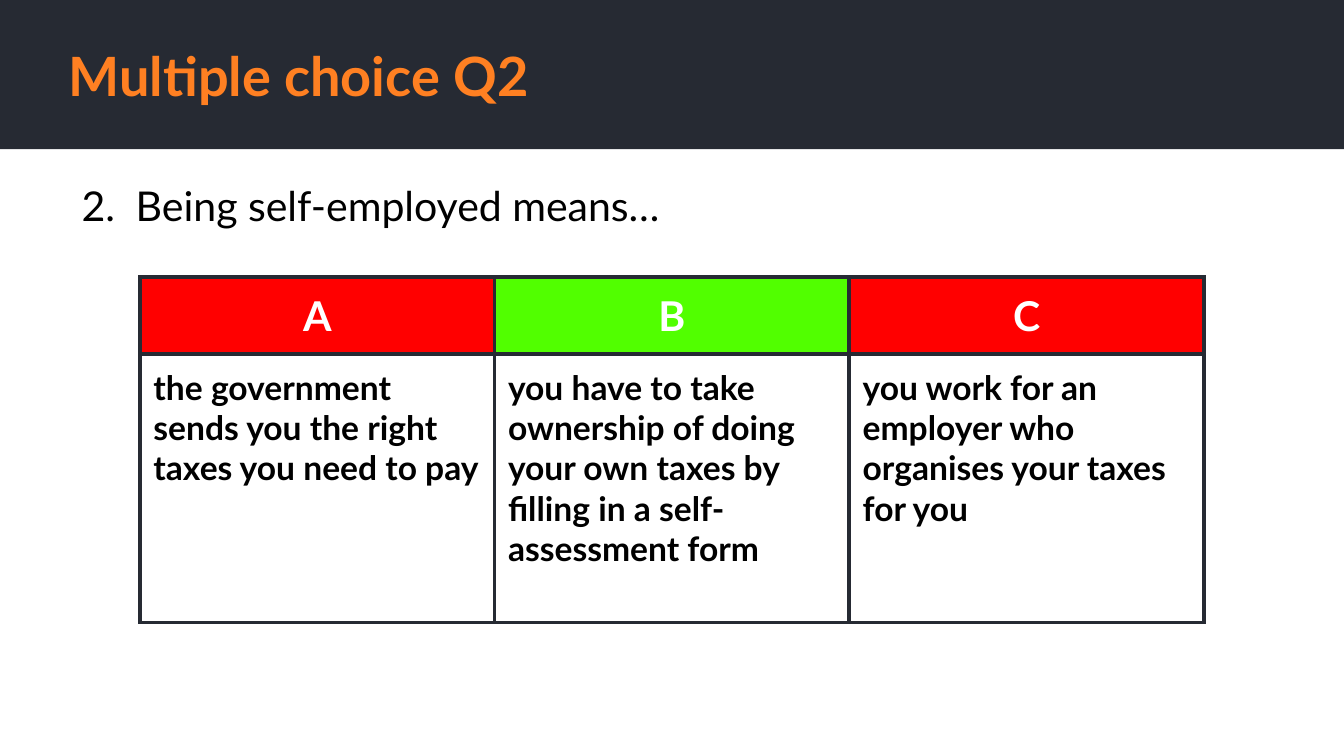
from pptx import Presentation
from pptx import util as u
from pptx.dml.color import RGBColor
from pptx.enum import shapes, text
from pptx.oxml import parse_xml
from pptx.oxml.ns import nsdecls

Pt = u.Pt
DARK, RED, GREEN = "262A33", "FF0000", "51FF00"


def ink(fmt, hue):
    fmt.solid()
    fmt.fore_color.rgb = RGBColor.from_string(hue)


def write(frame, words, size=18, hue="000000", bold=False,
          align=text.PP_ALIGN.LEFT, marks=()):
    frame.word_wrap = True
    para = frame.paragraphs[0]
    para.text = words
    para.alignment = align
    para.space_before = Pt(0)
    for mark in marks:
        para._p.get_or_add_pPr().append(parse_xml(mark))
    para.font.name, para.font.size, para.font.bold = "Lato", Pt(size), bold
    ink(para.font.fill, hue)
    return para


deck = Presentation()
deck.slide_width, deck.slide_height = Pt(720), Pt(405)
slide = deck.slides.add_slide(deck.slide_layouts[1])
title, body = slide.placeholders

# Header band, behind the title
band = slide.shapes.add_shape(shapes.MSO_SHAPE.RECTANGLE, 0, 0, Pt(720), Pt(80))
band.shadow.inherit = False
ink(band.fill, DARK)
band.line.fill.background()
slide.shapes._spTree.insert(2, band._element)

# Title and question
for box, top, width, high, anchor in (
        (title, 20, 629, 40, text.MSO_ANCHOR.MIDDLE),
        (body, 89.3, 603, 41, text.MSO_ANCHOR.TOP)):
    box.left, box.top, box.width, box.height = Pt(29.5), Pt(top), Pt(width), Pt(high)
    frame = box.text_frame
    frame.auto_size = text.MSO_AUTO_SIZE.NONE
    frame.vertical_anchor = anchor
    frame.margin_left = frame.margin_right = Pt(7.2)
    frame.margin_top = frame.margin_bottom = Pt(7.2)
write(title.text_frame, "Multiple choice Q2", size=29, hue="FF8022", bold=True)
number = f'<a:buAutoNum {nsdecls("a")} type="arabicPeriod" startAt="2"/>'
para = write(body.text_frame, "Being self-employed means…", size=22, marks=[number])
props = para._p.get_or_add_pPr()
props.set("marL", str(Pt(36)))
props.set("indent", str(-Pt(29)))

# Answer table
answers = (
    ("A", RED, "the government sends you the right taxes you need to pay"),
    ("B", GREEN, "you have to take ownership of doing your own taxes by "
                 "filling in a self-assessment form"),
    ("C", RED, "you work for an employer who organises your taxes for you"),
)
grid = slide.shapes.add_table(2, 3, Pt(75), Pt(148.5), Pt(570), Pt(185)).table
grid.rows[0].height, grid.rows[1].height = Pt(41), Pt(144)
for col, (head, hue, words) in enumerate(answers):
    grid.columns[col].width = Pt(190)
    top, low = grid.cell(0, col), grid.cell(1, col)
    write(top.text_frame, head, size=22, hue="FFFFFF", bold=True,
          align=text.PP_ALIGN.CENTER)
    write(low.text_frame, words, bold=True)
    for cell, fill in ((top, hue), (low, "FFFFFF")):
        cell.margin_left = cell.margin_right = Pt(7.2)
        cell.margin_top = cell.margin_bottom = Pt(7.2)
        # Borders come before the fill in the cell properties
        for side in ("lnL", "lnR", "lnT", "lnB"):
            cell._tc.get_or_add_tcPr().append(parse_xml(
                f'<a:{side} {nsdecls("a")} w="{Pt(2.25)}"><a:solidFill>'
                f'<a:srgbClr val="{DARK}"/></a:solidFill></a:{side}>'))
        ink(cell.fill, fill)

deck.save("out.pptx")
